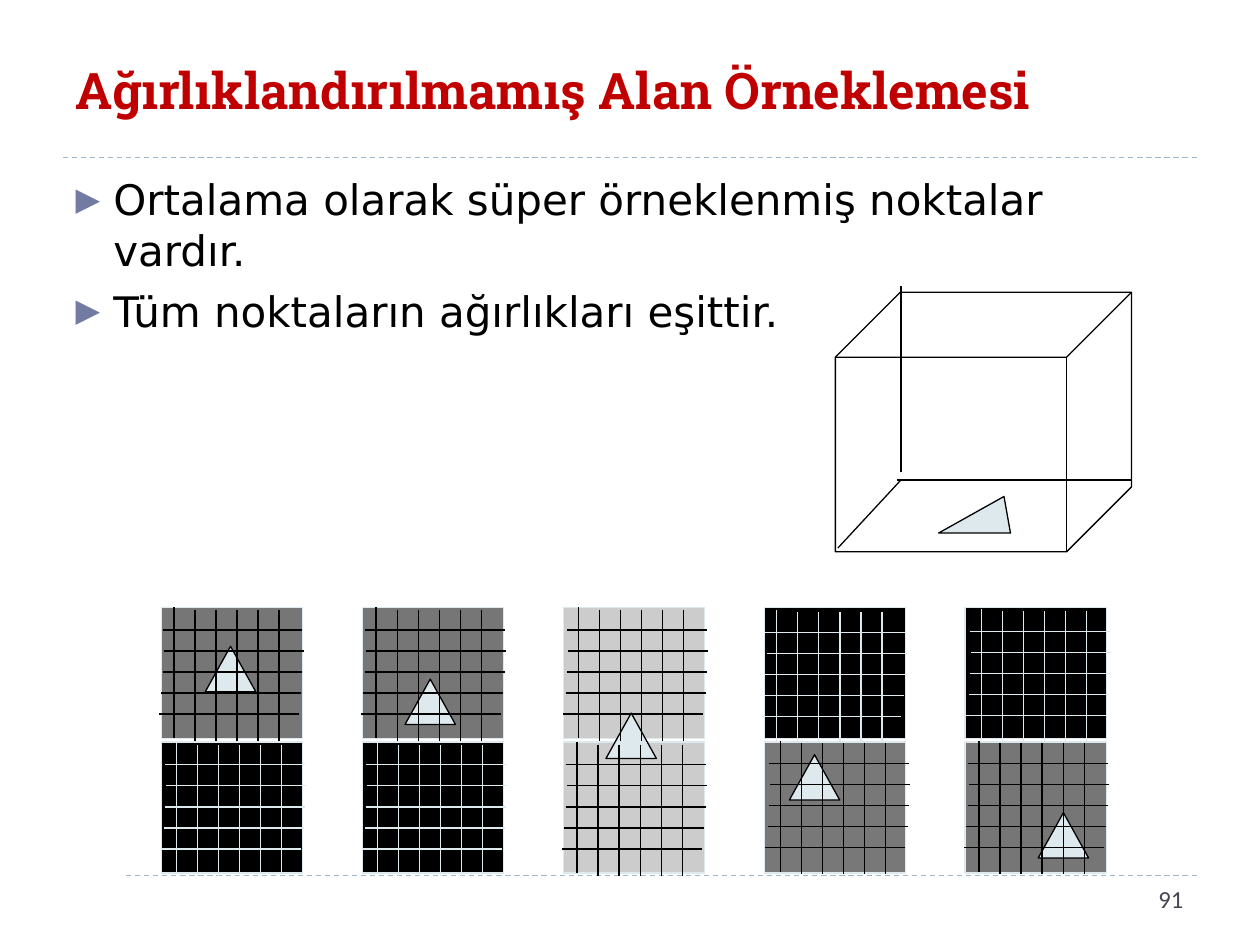
from lxml import etree
from pptx import Presentation
from pptx.dml.color import RGBColor
from pptx.enum.dml import MSO_LINE
from pptx.enum.shapes import MSO_CONNECTOR, MSO_SHAPE
from pptx.enum.text import MSO_ANCHOR, MSO_AUTO_SIZE, PP_ALIGN
from pptx.oxml.ns import qn
from pptx.util import Inches, Pt

STRAIGHT = MSO_CONNECTOR.STRAIGHT
RECTANGLE, TRIANGLE, CUBE = MSO_SHAPE.RECTANGLE, MSO_SHAPE.ISOSCELES_TRIANGLE, MSO_SHAPE.CUBE
DASH = MSO_LINE.DASH
LEFT, RIGHT = PP_ALIGN.LEFT, PP_ALIGN.RIGHT
TOP, MIDDLE = MSO_ANCHOR.TOP, MSO_ANCHOR.MIDDLE

BLACK, WHITE, PALE = "000000", "FFFFFF", "DDE9EC"
GRAY, LIGHT = "767676", "CCCCCC"
CELL_WIDTH, CELL_HEIGHT = 1.12, 1.04
PANEL_PITCH, ROW_PITCH = 1.595, 1.07
GRID_STEP = 0.167
ROW_SHIFTS = [0, 0.01, 0, -0.01, -0.03]  # the grid rows are slightly uneven

# One entry per panel: cell fills, triangle position in the panel and,
# for the upper and lower cell, the grid's position in the panel.
PANELS = [
    {"fills": (GRAY, BLACK), "triangle": (0.35, 0.31), "grids": ((0.1, 0), (0.12, 1.07))},
    {"fills": (GRAY, BLACK), "triangle": (0.34, 0.57), "grids": ((0.11, 0), (0.12, 1.07))},
    {"fills": (LIGHT, LIGHT), "triangle": (0.34, 0.84), "grids": ((0.12, 0), (0.11, 1.07))},
    {"fills": (BLACK, "787878"), "triangle": (0.2, 1.17), "grids": ((0.1, 0.02), (0.13, 1.06))},
    {"fills": (BLACK, GRAY), "triangle": (0.58, 1.63), "grids": ((0.13, 0.01), (0.11, 1.06))},
]


def color(value):
    return RGBColor.from_string(value)


def add_line(shapes, start, end, line_color=BLACK, dash=None):
    connector = shapes.add_connector(STRAIGHT, *(Inches(value) for value in (*start, *end)))
    connector.line.color.rgb = color(line_color)
    connector.line.width = Pt(0.75)
    if dash is not None:
        connector.line.dash_style = dash
    etree.SubElement(connector._element.spPr, qn("a:effectLst"))


def add_shape(shapes, kind, box, fill=None, line_color=None, adjustment=None):
    shape = shapes.add_shape(kind, *(Inches(value) for value in box))
    shape.shadow.inherit = False
    if fill:
        shape.fill.solid()
        shape.fill.fore_color.rgb = color(fill)
    else:
        shape.fill.background()
    if line_color:
        shape.line.color.rgb = color(line_color)
        shape.line.width = Pt(0.75)
    else:
        shape.line.fill.background()
    if adjustment is not None:
        shape.adjustments[0] = adjustment
    return shape


def format_text(paragraph, text, font_color, alignment=LEFT, **font_format):
    paragraph.text = text
    paragraph.alignment = alignment
    for name, value in font_format.items():
        setattr(paragraph.font, name, value)
    paragraph.font.color.rgb = color(font_color)


def place_placeholder(placeholder, box, anchor):
    for name, value in zip(("left", "top", "width", "height"), box):
        setattr(placeholder, name, Inches(value))
    frame = placeholder.text_frame
    frame.word_wrap = True
    frame.auto_size = MSO_AUTO_SIZE.NONE
    frame.vertical_anchor = anchor
    return frame


def add_bullet(paragraph):
    properties = paragraph._p.get_or_add_pPr()
    properties.set("marL", str(Inches(0.3)))
    properties.set("indent", str(Inches(-0.3)))
    bullet_color = etree.SubElement(properties, qn("a:buClr"))
    etree.SubElement(bullet_color, qn("a:srgbClr"), val="727CA3")
    etree.SubElement(properties, qn("a:buSzPct"), val="76000")
    etree.SubElement(properties, qn("a:buFont"), typeface="DejaVu Sans")
    etree.SubElement(properties, qn("a:buChar"), char="▶")


def add_title(slide, box, text):
    frame = place_placeholder(slide.shapes.title, box, MIDDLE)
    format_text(frame.paragraphs[0], text, "C00000",
                size=Pt(28.8), name="Roboto Slab", bold=True)


def add_body(slide, box, items):
    frame = place_placeholder(slide.placeholders[1], box, TOP)
    for index, item in enumerate(items):
        paragraph = frame.add_paragraph() if index else frame.paragraphs[0]
        add_bullet(paragraph)
        paragraph.space_before = Pt(6 if index else 0)
        format_text(paragraph, item, BLACK, size=Pt(24), name="DejaVu Sans")


def add_frame_lines(slide, left, right):
    for y in (6.95, 1.25):
        add_line(slide.shapes, (left, y), (right, y), "9FB8CD", DASH)
    add_shape(slide.shapes, RECTANGLE, (0.35, 6.82, 0.63, 0.63), WHITE)


def add_page_number(slide, box, number):
    shape = add_shape(slide.shapes, RECTANGLE, box, WHITE)
    shape.text_frame.vertical_anchor = TOP
    format_text(shape.text_frame.paragraphs[0], number, "464653", RIGHT,
                size=Pt(14), name="Calibri")


def add_grid(slide, left, top, line_color):
    """Draw six columns and five rows; left and top mark the first column's upper end."""
    shapes = slide.shapes.add_group_shape().shapes
    for column in range(6):
        x = left + column * GRID_STEP
        y = top + (0.02 if column else 0)
        add_line(shapes, (x, y), (x, y + CELL_HEIGHT), line_color)
    for row, shift in enumerate(ROW_SHIFTS):
        x = left - 0.09 + shift
        y = top + 0.18 + row * GRID_STEP
        add_line(shapes, (x, y), (x + 1.11, y), line_color)


def add_panels(slide, left, top):
    """Draw the sampled cell pairs, then the triangles, then the grids over both."""
    panels = [(left + index * PANEL_PITCH, panel) for index, panel in enumerate(PANELS)]
    shapes = slide.shapes.add_group_shape().shapes
    for x, panel in panels:
        for row, fill in enumerate(panel["fills"]):
            add_shape(shapes, RECTANGLE, (x, top + row * ROW_PITCH, CELL_WIDTH, CELL_HEIGHT),
                      fill, PALE)
    for x, panel in panels:
        offset_x, offset_y = panel["triangle"]
        add_shape(shapes, TRIANGLE, (x + offset_x, top + offset_y, 0.4, 0.36), PALE, BLACK)
    for x, panel in panels:
        for fill, (offset_x, offset_y) in zip(panel["fills"], panel["grids"]):
            add_grid(slide, x + offset_x, top + offset_y, PALE if fill == BLACK else BLACK)


def add_wire_cube(slide, left, top, width, height):
    shapes = slide.shapes.add_group_shape().shapes
    add_shape(shapes, CUBE, (left, top, width, height), None, BLACK, 0.25)
    add_shape(shapes, TRIANGLE, (left + 0.82, top + 1.62, 0.57, 0.29), PALE, BLACK, 0.91)
    back_x, back_y = left + 0.52, top + 1.49
    add_line(shapes, (left + 0.02, top + height - 0.03), (back_x, back_y))
    add_line(shapes, (back_x - 0.03, back_y), (left + width, back_y))
    add_line(shapes, (back_x, back_y - 0.06), (back_x, top - 0.05))


def main():
    presentation = Presentation()
    presentation.slide_width, presentation.slide_height = Inches(10), Inches(7.5)
    slide = presentation.slides.add_slide(presentation.slide_layouts[1])
    add_frame_lines(slide, 0.5, 9.5)
    add_panels(slide, 1.28, 4.82)
    add_title(slide, (0.5, 0.17, 9, 1.08), "Ağırlıklandırılmamış Alan Örneklemesi")
    add_page_number(slide, (7.16, 6.97, 2.33, 0.4), "91")
    add_body(slide, (0.5, 1.33, 9, 5.4), [
        "Ortalama olarak süper örneklenmiş noktalar vardır.",
        "Tüm noktaların ağırlıkları eşittir.",
    ])
    add_wire_cube(slide, 6.63, 2.32, 2.35, 2.06)
    presentation.save("out.pptx")


if __name__ == "__main__":
    main()
